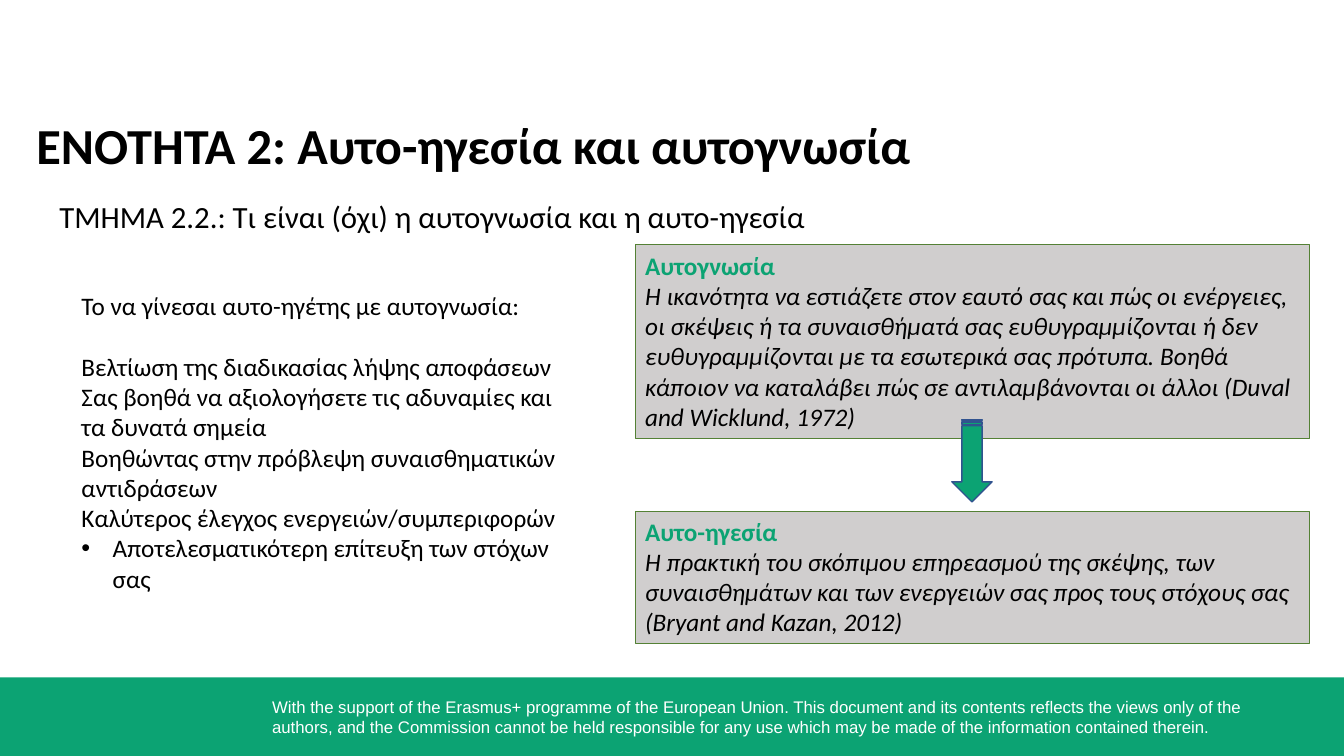
from lxml.etree import SubElement
from pptx import Presentation
from pptx.dml.color import RGBColor
from pptx.enum.shapes import MSO_SHAPE as Shape
from pptx.enum.text import MSO_ANCHOR as Anchor, PP_ALIGN as Align
from pptx.oxml.ns import qn
from pptx.util import Inches, Pt

COLORS = {
    "green": "0CA373",
    "panel": "D0CECE",
    "panel_edge": "548135",
    "arrow_edge": "31538F",
    "black": "000000",
    "white": "FFFFFF",
}
TEXT_INSETS = (0.1, 0.05, 0.1, 0.05)
BENEFITS = [
    "Βελτίωση της διαδικασίας λήψης αποφάσεων",
    "Σας βοηθά να αξιολογήσετε τις αδυναμίες και τα δυνατά σημεία",
    "Βοηθώντας στην πρόβλεψη συναισθηματικών αντιδράσεων",
    "Καλύτερος έλεγχος ενεργειών/συμπεριφορών",
]
LAST_BENEFIT = "Αποτελεσματικότερη επίτευξη των στόχων σας"
DEFINITIONS = [
    (2.43, 1.92, "Αυτογνωσία",
     "Η ικανότητα να εστιάζετε στον εαυτό σας και πώς οι ενέργειες, οι σκέψεις "
     "ή τα συναισθήματά σας ευθυγραμμίζονται ή δεν ευθυγραμμίζονται με τα "
     "εσωτερικά σας πρότυπα. Βοηθά κάποιον να καταλάβει πώς σε "
     "αντιλαμβάνονται οι άλλοι (Duval and Wicklund, 1972)"),
    (5.07, 1.31, "Αυτο-ηγεσία",
     "Η πρακτική του σκόπιμου επηρεασμού της σκέψης, των συναισθημάτων και των "
     "ενεργειών σας προς τους στόχους σας (Bryant and Kazan, 2012)"),
]
FOOTER = (
    "With the support of the Erasmus+ programme of the European Union. This "
    "document and its contents reflects the views only of the authors, and the "
    "Commission cannot be held responsible for any use which may be made of the "
    "information contained therein."
)


def color(name):
    """Return the named palette colour."""
    return RGBColor.from_string(COLORS[name])


def add_span(para, text, size, tint="black", font="Calibri", bold=False, italic=False):
    """Append one formatted run to a paragraph."""
    span = para.add_run()
    span.text = text
    span.font.name = font
    span.font.size = Pt(size)
    span.font.bold = bold
    span.font.italic = italic
    span.font.color.rgb = color(tint)


def set_frame(frame, insets):
    """Wrap a text frame, anchor it at the top and set its insets."""
    frame.word_wrap = True
    frame.vertical_anchor = Anchor.TOP
    (frame.margin_left, frame.margin_top,
     frame.margin_right, frame.margin_bottom) = map(Inches, insets)


def add_text(page, place, insets=TEXT_INSETS):
    """Add an empty text box and return its frame."""
    box = page.shapes.add_textbox(*map(Inches, place))
    set_frame(box.text_frame, insets)
    return box.text_frame


def add_figure(page, kind, place, fill, edge=None, width=1):
    """Add a flat preset shape with an optional outline."""
    figure = page.shapes.add_shape(kind, *map(Inches, place))
    figure.shadow.inherit = False
    figure.fill.solid()
    figure.fill.fore_color.rgb = color(fill)
    if edge:
        figure.line.color.rgb = color(edge)
        figure.line.width = Pt(width)
    else:
        figure.line.fill.background()
    return figure


def add_definition(page, top, height, term, meaning):
    """Add a grey panel with a green term and its meaning."""
    panel = add_figure(page, Shape.RECTANGLE, (6.3, top, 6.69, height),
                       "panel", "panel_edge", 0.75)
    set_frame(panel.text_frame, TEXT_INSETS)
    para = panel.text_frame.paragraphs[0]
    para.alignment = Align.LEFT
    add_span(para, term, 18, "green", bold=True)
    para.add_line_break()
    add_span(para, meaning, 18, italic=True)


def set_bullet(para, indent):
    """Give a paragraph a round bullet with a hanging indent."""
    props = para._p.get_or_add_pPr()
    props.set("marL", str(Inches(indent)))
    props.set("indent", str(-Inches(indent)))
    SubElement(props, qn("a:buFont"), typeface="Arial")
    SubElement(props, qn("a:buChar"), char="•")


def add_benefits(page):
    """Add the introduction and the list of benefits."""
    frame = add_text(page, (0.71, 2.83, 4.92, 3.74))
    add_span(frame.paragraphs[0], "Το να γίνεσαι αυτο-ηγέτης με αυτογνωσία:", 18)
    for index, benefit in enumerate(BENEFITS):
        para = frame.add_paragraph()
        if index == 0:
            para.space_before = Pt(22)
        add_span(para, benefit, 18)
    para = frame.add_paragraph()
    set_bullet(para, 0.31)
    add_span(para, LAST_BENEFIT, 18)


def add_footer(page):
    """Add the green band with the funding statement."""
    add_figure(page, Shape.RECTANGLE, (0, 6.72, 13.33, 0.78), "green")
    frame = add_text(page, (2.6, 6.86, 10.42, 0.5))
    add_span(frame.paragraphs[0], FOOTER, 12, "white", "Arial")


def main():
    """Build the slide and save the deck."""
    deck = Presentation()
    deck.slide_width, deck.slide_height = Inches(13.33), Inches(7.5)
    page = deck.slides.add_slide(deck.slide_layouts[6])
    add_footer(page)
    for definition in DEFINITIONS:
        add_definition(page, *definition)
    arrow = add_figure(page, Shape.STRIPED_RIGHT_ARROW, (9.23, 4.37, 0.82, 0.4),
                       "green", "arrow_edge")
    arrow.rotation = 90
    add_benefits(page)
    subtitle = add_text(page, (0.58, 1.94, 8.42, 0.39), (0.01, 0.02, 0, 0))
    add_span(subtitle.paragraphs[0],
             "ΤΜΗΜΑ 2.2.: Τι είναι (όχι) η αυτογνωσία και η αυτο-ηγεσία", 22)
    title = add_text(page, (0.35, 1.12, 11.38, 0.62), (0.01, 0.01, 0, 0))
    add_span(title.paragraphs[0], "ΕΝΟΤΗΤΑ 2: Αυτο-ηγεσία και αυτογνωσία", 36, bold=True)
    deck.save("out.pptx")


if __name__ == "__main__":
    main()
